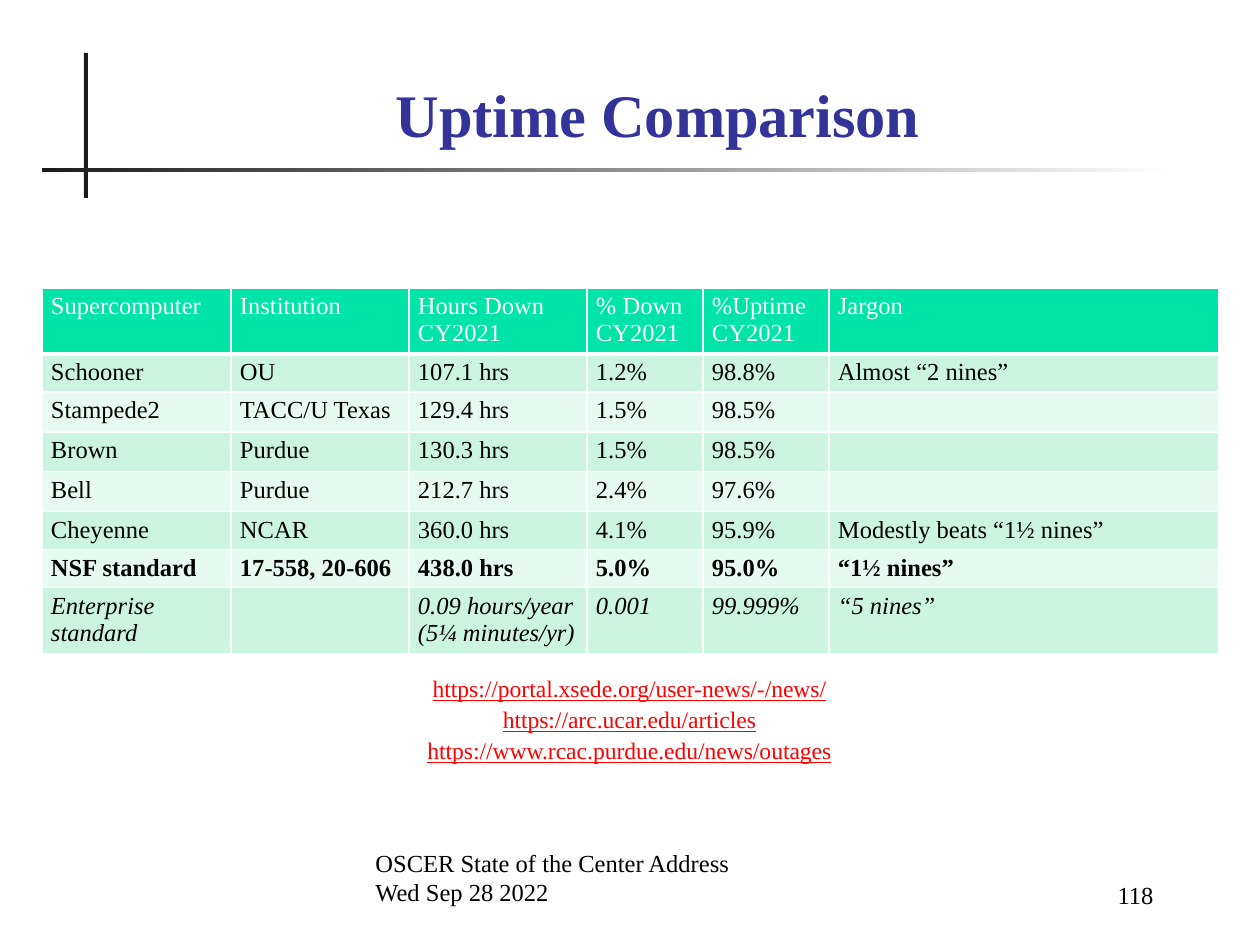
from dataclasses import dataclass

from lxml.etree import SubElement
from pptx import Presentation
from pptx.dml.color import RGBColor as RGB
from pptx.enum.shapes import MSO_SHAPE as Shape
from pptx.enum.text import MSO_ANCHOR as Anchor, PP_ALIGN as Align
from pptx.oxml.ns import qn
from pptx.util import Emu, Pt


@dataclass(frozen=True)
class Theme:
    font: str = "Times New Roman"
    ink: str = "000000"
    white: str = "FFFFFF"
    rule: str = "1C1C1C"
    title: str = "333399"
    link: str = "FF0000"
    head: str = "00E4A8"
    bands: tuple = ("CCF5E1", "E7FAF1")
    big: float = 34.5
    body: float = 14
    small: float = 13.5


T = Theme()
COLS = (189, 178, 178, 116, 126, 390)
HIGHS = (66, 38, 39, 38, 39, 38, 38, 66)
ROWS = (
    ("Supercomputer", "Institution", "Hours Down CY2021", "% Down CY2021",
     "%Uptime CY2021", "Jargon"),
    ("Schooner", "OU", "107.1 hrs", "1.2%", "98.8%", "Almost “2 nines”"),
    ("Stampede2", "TACC/U Texas", "129.4 hrs", "1.5%", "98.5%", ""),
    ("Brown", "Purdue", "130.3 hrs", "1.5%", "98.5%", ""),
    ("Bell", "Purdue", "212.7 hrs", "2.4%", "97.6%", ""),
    ("Cheyenne", "NCAR", "360.0 hrs", "4.1%", "95.9%",
     "Modestly beats “1½ nines”"),
    ("NSF standard", "17-558, 20-606", "438.0 hrs", "5.0%", "95.0%",
     "“1½ nines”"),
    ("Enterprise standard", "", "0.09 hours/year\n(5¼ minutes/yr)", "0.001",
     "99.999%", "“5 nines”"),
)
STYLES = {0: {"color": T.white}, 6: {"bold": True}, 7: {"italic": True}}
LINKS = """https://portal.xsede.org/user-news/-/news/
https://arc.ucar.edu/articles
https://www.rcac.purdue.edu/news/outages"""


def px(n):
    return Emu(round(n * 914400 / 126))


def write(frame, text, size=T.body, color=T.ink, align=Align.LEFT, bold=False,
          italic=False, under=False, space=None):
    """Fill a text frame, one paragraph for each line."""
    frame.word_wrap = True
    for i, line in enumerate(text.split("\n")):
        para = frame.add_paragraph() if i else frame.paragraphs[0]
        para.alignment = align
        if space:
            para.line_spacing = space
        if not line:  # keeps an empty cell at the body text height
            SubElement(para._p, qn("a:endParaRPr"), sz=str(int(size * 100)))
            continue
        run = para.add_run()
        run.text = line
        font = run.font
        font.name, font.size = T.font, Pt(size)
        font.bold, font.italic, font.underline = bold, italic, under
        font.color.rgb = RGB.from_string(color)


def add_text(slide, box, text, anchor=Anchor.TOP, **form):
    frame = slide.shapes.add_textbox(*map(px, box)).text_frame
    frame.vertical_anchor = anchor
    write(frame, text, **form)


def add_title(slide, box, text):
    title = slide.shapes.title
    title.left, title.top, title.width, title.height = map(px, box)
    title.text_frame.vertical_anchor = Anchor.BOTTOM
    write(title.text_frame, text, size=T.big, color=T.title,
          align=Align.CENTER, bold=True)


def add_bar(slide, box, fade=False):
    bar = slide.shapes.add_shape(Shape.RECTANGLE, *map(px, box))
    bar.shadow.inherit = False
    bar.line.fill.background()
    if fade:
        bar.fill.gradient()
        bar.fill.gradient_angle = 0
        for stop, color in zip(bar.fill.gradient_stops, (T.rule, T.white)):
            stop.color.rgb = RGB.from_string(color)
    else:
        bar.fill.solid()
        bar.fill.fore_color.rgb = RGB.from_string(T.rule)


def edge(cell, base):
    """Draw white cell borders, with the given width below."""
    props = cell._tc.get_or_add_tcPr()
    for side, width in (("L", 1), ("R", 1), ("T", 1), ("B", base)):
        line = SubElement(props, qn(f"a:ln{side}"), w=str(Pt(width)))
        fill = SubElement(line, qn("a:solidFill"))
        SubElement(fill, qn("a:srgbClr"), val=T.white)


def add_grid(slide, left, top):
    box = (left, top, sum(COLS), sum(HIGHS))
    table = slide.shapes.add_table(len(ROWS), len(COLS), *map(px, box)).table
    table.horz_banding = False
    for col, width in zip(table.columns, COLS):
        col.width = px(width)
    for r, (row, high) in enumerate(zip(ROWS, HIGHS)):
        table.rows[r].height = px(high)
        tint = T.bands[(r - 1) % 2] if r else T.head
        for c, text in enumerate(row):
            cell = table.cell(r, c)
            cell.margin_left = cell.margin_right = px(9)
            cell.margin_top = cell.margin_bottom = px(5)
            edge(cell, 1 if r else 3)
            cell.fill.solid()
            cell.fill.fore_color.rgb = RGB.from_string(tint)
            write(cell.text_frame, text, **STYLES.get(r, {}))


def main():
    deck = Presentation()
    deck.slide_width, deck.slide_height = px(1260), px(945)
    slide = deck.slides.add_slide(deck.slide_layouts[5])

    # Crossed rules and title
    add_bar(slide, (84, 53, 4, 145))
    add_bar(slide, (42, 168, 1134, 4), fade=True)
    add_title(slide, (105, 63, 1105, 93), "Uptime Comparison")

    # Uptime table and its sources
    add_grid(slide, 42, 288)
    add_text(slide, (404, 665, 451, 145), LINKS, size=T.small, color=T.link,
             align=Align.CENTER, under=True, space=1.1)

    # Footer
    add_text(slide, (363, 850, 551, 63),
             "OSCER State of the Center Address\nWed Sep 28 2022",
             anchor=Anchor.BOTTOM)
    add_text(slide, (987, 853, 179, 63), "118", anchor=Anchor.BOTTOM,
             align=Align.RIGHT)
    deck.save("out.pptx")


if __name__ == "__main__":
    main()
